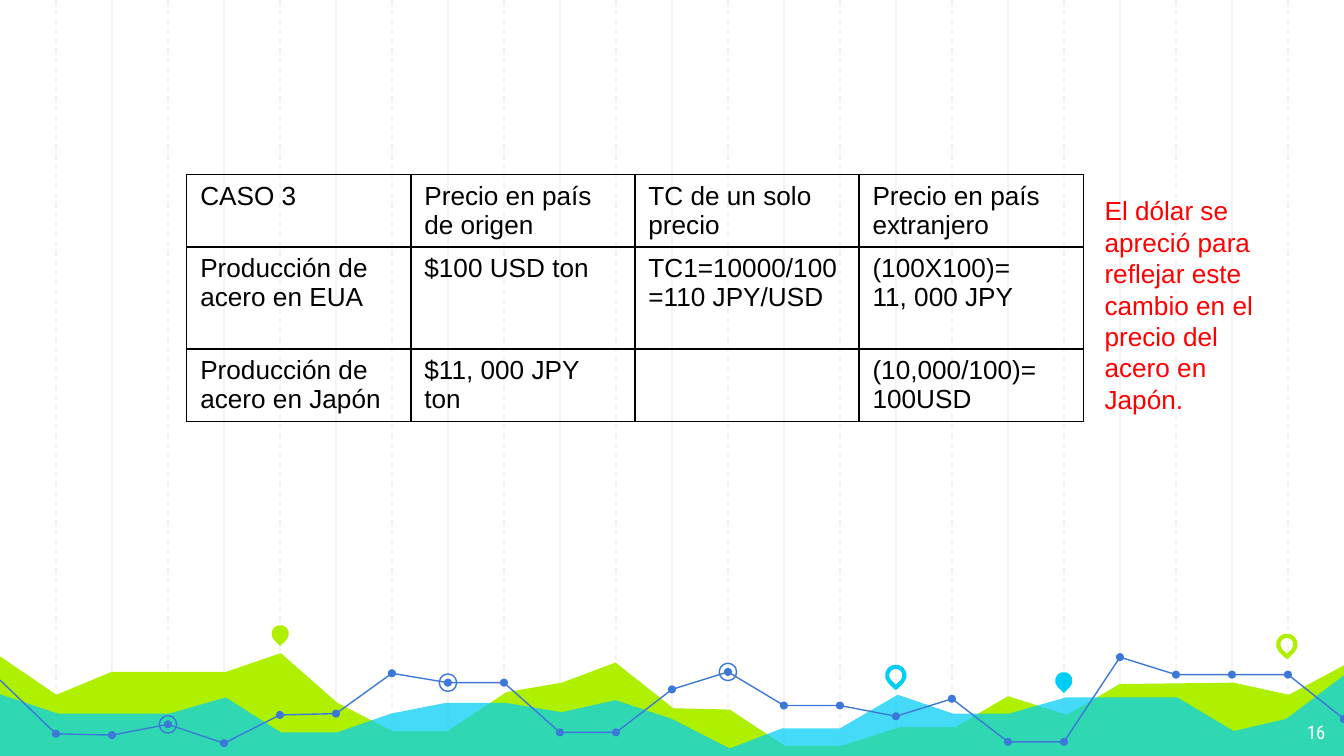
"""Build the "Caso 3" exchange-rate slide over a decorative chart landscape."""
from typing import NamedTuple, Optional

from lxml import etree
from pptx import Presentation, util as u
from pptx.dml.color import RGBColor
from pptx.enum import dml, shapes, text
from pptx.oxml import ns

GREEN, CYAN, BLUE, GRID = "AFF000", "00CEF6", "3C78D8", "F3F3F3"
BLACK, WHITE, RED = "000000", "FFFFFF", "FF0000"
PAGE_WIDTH = 10
PAGE_HEIGHT = PAGE_WIDTH * 9 / 16
STEP = PAGE_WIDTH / 24
BOTTOM = 5.65

Point = tuple[float, float]


class Area(NamedTuple):
    color: str
    opacity: int
    ridge: list[Point]


class Marker(NamedTuple):
    left: float
    top: float
    color: str
    filled: bool


class Label(NamedTuple):
    left: float
    top: float
    width: float
    height: float
    words: str
    font: str
    size: int
    color: str
    inset: float
    align: text.PP_ALIGN


AREAS = [
    Area(GREEN, 100, [
        (-0.02, 4.87), (0.42, 5.17), (0.83, 5), (1.68, 5), (2.09, 4.86), (2.51, 5.23),
        (2.92, 5.44), (3.33, 5.44), (3.77, 5.15), (4.18, 5.08), (4.58, 4.93), (5.01, 5.27),
        (5.43, 5.28), (5.84, 5.55), (6.26, 5.55), (6.7, 5.41), (7.11, 5.41), (7.5, 5.18),
        (7.94, 5.32), (8.33, 5.09), (9.18, 5.08), (9.59, 5.17), (10.02, 4.94)]),
    Area(CYAN, 73, [
        (-0.02, 5.16), (0.43, 5.31), (1.26, 5.31), (1.68, 5.19), (2.09, 5.45), (2.51, 5.45),
        (2.91, 5.31), (3.32, 5.23), (3.76, 5.23), (4.18, 5.3), (4.58, 5.21), (5, 5.35),
        (5.43, 5.57), (5.82, 5.42), (6.25, 5.42), (6.68, 5.17), (7.09, 5.31), (7.51, 5.31),
        (7.93, 5.19), (8.76, 5.19), (9.18, 5.44), (9.57, 5.35), (10.02, 5.01)]),
]
TREND_HEIGHTS = [
    5.06, 5.46, 5.47, 5.39, 5.53, 5.32, 5.31, 5.01, 5.08, 5.08, 5.45, 5.45, 5.13,
    5, 5.25, 5.25, 5.33, 5.2, 5.52, 5.52, 4.89, 5.02, 5.02, 5.02, 5.35]
TREND = [(column * STEP, height) for column, height in enumerate(TREND_HEIGHTS)]
TREND_PARTS = [TREND[:12], TREND[11:21], TREND[20:]]
RINGED = (3, 8, 13)
MARKERS = [
    Marker(2.02, 4.65, GREEN, True),
    Marker(6.6, 4.96, CYAN, False),
    Marker(7.85, 5, CYAN, True),
    Marker(9.51, 4.73, GREEN, False),
]
ROWS = [
    ["CASO 3", "Precio en país de origen", "TC de un solo precio", "Precio en país extranjero"],
    ["Producción de acero en EUA", "$100 USD ton", "TC1=10000/100=110 JPY/USD",
     "(100X100)=\n11, 000 JPY"],
    ["Producción de acero en Japón", "$11, 000 JPY ton", "", "(10,000/100)=\n100USD"],
]
ROW_HEIGHTS = [0.53, 0.76, 0.53]
LABELS = [
    Label(9.36, 5.28, 0.6, 0.35, "16", "Roboto Condensed", 10, WHITE, 0.1,
          text.PP_ALIGN.RIGHT),
    Label(8.12, 1.4, 1.58, 1.51,
          "El dólar se apreció para reflejar este cambio en el precio del acero en Japón.",
          "Arial", 14, RED, 0.05, text.PP_ALIGN.LEFT),
]


def rgb(color: str) -> RGBColor:
    """Turn a hex string into a colour."""
    return RGBColor.from_string(color)


def paint(shape, fill: Optional[str] = None, line: Optional[str] = None,
          width: float = 0.75) -> None:
    """Set the fill and outline of a shape and drop its shadow."""
    shape.shadow.inherit = False
    if fill:
        shape.fill.solid()
        shape.fill.fore_color.rgb = rgb(fill)
    else:
        shape.fill.background()
    if line:
        shape.line.color.rgb = rgb(line)
        shape.line.width = u.Pt(width)
    else:
        shape.line.fill.background()


def style(frame, font: str, size: int, color: str) -> None:
    """Format every run of a text frame."""
    for para in frame.paragraphs:
        for span in para.runs:
            span.font.name = font
            span.font.size = u.Pt(size)
            span.font.color.rgb = rgb(color)


def add_grid_line(page, column: int) -> None:
    """Draw one vertical grid line, dashed in odd columns."""
    x = u.Inches(column * STEP)
    line = page.shapes.add_connector(shapes.MSO_CONNECTOR.STRAIGHT, x, 0, x, u.Inches(BOTTOM))
    line.line.color.rgb = rgb(GRID)
    line.line.width = u.Pt(0.75)
    if column % 2:
        line.line.dash_style = dml.MSO_LINE.DASH
    etree.SubElement(line.element.spPr, ns.qn("a:effectLst"))


def add_path(page, points: list[Point], closed: bool):
    """Build a freeform through the points."""
    corners = [(u.Inches(x), u.Inches(y)) for x, y in points]
    builder = page.shapes.build_freeform(*corners[0])
    builder.add_line_segments(corners[1:], close=closed)
    return builder.convert_to_shape()


def add_area(page, area: Area) -> None:
    """Draw a filled landscape down to the bottom edge."""
    shape = add_path(page, area.ridge + [(10.02, BOTTOM), (-0.03, BOTTOM)], True)
    paint(shape, fill=area.color)
    if area.opacity < 100:
        tint = shape.element.spPr.find(".//" + ns.qn("a:srgbClr"))
        etree.SubElement(tint, ns.qn("a:alpha"), val=str(area.opacity * 1000))


def add_circle(page, center: Point, size: float, fill: Optional[str], line: Optional[str]) -> None:
    """Draw a circle around a centre point."""
    left, top = (u.Inches(value - size / 2) for value in center)
    circle = page.shapes.add_shape(
        shapes.MSO_SHAPE.OVAL, left, top, u.Inches(size), u.Inches(size))
    paint(circle, fill, line)


def add_marker(page, marker: Marker) -> None:
    """Draw a map pin, either solid or outlined."""
    size = u.Inches(0.13)
    pin = page.shapes.add_shape(
        shapes.MSO_SHAPE.TEAR, u.Inches(marker.left), u.Inches(marker.top), size, size)
    pin.rotation = 135
    if marker.filled:
        paint(pin, fill=marker.color)
    else:
        paint(pin, line=marker.color, width=2.25)


def add_borders(cell, color: str) -> None:
    """Give a cell a thin line on all four sides."""
    properties = cell._tc.get_or_add_tcPr()
    for side in ("lnL", "lnR", "lnT", "lnB"):
        edge = etree.SubElement(properties, ns.qn(f"a:{side}"), w=str(u.Pt(0.75)))
        fill = etree.SubElement(edge, ns.qn("a:solidFill"))
        etree.SubElement(fill, ns.qn("a:srgbClr"), val=color)


def add_price_table(page) -> None:
    """Draw the price comparison table."""
    table = page.shapes.add_table(
        len(ROWS), len(ROWS[0]), u.Inches(1.39), u.Inches(1.3),
        u.Inches(6.67), u.Inches(sum(ROW_HEIGHTS))).table
    table.first_row = table.horz_banding = False
    for row, height, entries in zip(table.rows, ROW_HEIGHTS, ROWS):
        row.height = u.Inches(height)
        for cell, entry in zip(row.cells, entries):
            cell.text_frame.text = entry
            style(cell.text_frame, "Arial", 14, BLACK)
            add_borders(cell, BLACK)
            cell.fill.background()


def add_label(page, label: Label) -> None:
    """Place a wrapped text box."""
    box = page.shapes.add_textbox(*map(u.Inches, label[:4]))
    frame = box.text_frame
    frame.word_wrap = True
    frame.margin_top = frame.margin_bottom = u.Inches(label.inset)
    frame.text = label.words
    frame.paragraphs[0].alignment = label.align
    style(frame, label.font, label.size, label.color)


def main() -> None:
    """Assemble and save the slide."""
    deck = Presentation()
    deck.slide_width, deck.slide_height = u.Inches(PAGE_WIDTH), u.Inches(PAGE_HEIGHT)
    page = deck.slides.add_slide(deck.slide_layouts[6])
    for column in [*range(2, 24, 2), *range(1, 24, 2)]:
        add_grid_line(page, column)
    for area in AREAS:
        add_area(page, area)
    for part in TREND_PARTS:
        paint(add_path(page, part, False), line=BLUE)
    for center in TREND[1:]:
        add_circle(page, center, 0.06, BLUE, None)
    for column in RINGED:
        add_circle(page, TREND[column], 0.13, None, BLUE)
    for marker in MARKERS:
        add_marker(page, marker)
    add_price_table(page)
    for label in LABELS:
        add_label(page, label)
    deck.save("out.pptx")


if __name__ == "__main__":
    main()
